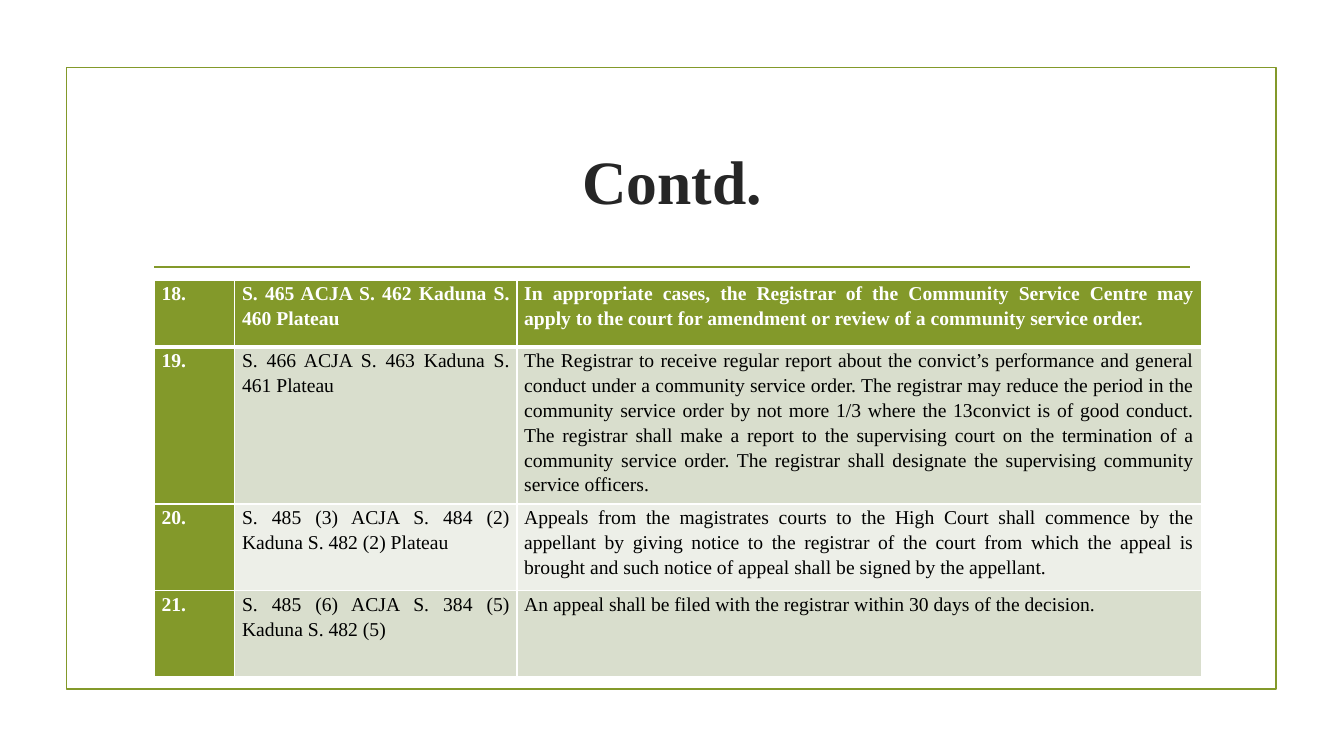
import lxml.etree
import pptx
import pptx.dml.color
import pptx.enum.shapes
import pptx.enum.text
import pptx.oxml.ns
import pptx.util

Cm = pptx.util.Cm
Pt = pptx.util.Pt
RGBColor = pptx.dml.color.RGBColor
qn = pptx.oxml.ns.qn

GREEN = RGBColor(0x83, 0x99, 0x2A)
DARK_BAND = RGBColor(0xD9, 0xDE, 0xCD)
LIGHT_BAND = RGBColor(0xED, 0xEF, 0xE8)
CHARCOAL = RGBColor(0x26, 0x26, 0x26)
WHITE = RGBColor(0xFF, 0xFF, 0xFF)
BLACK = RGBColor(0x00, 0x00, 0x00)

FONT_NAME = "Times New Roman"
COLUMN_WIDTHS = [2.03, 7.11, 17.25]
ROW_HEIGHTS = [1.68, 3.96, 2.18, 2.18]
PROVISIONS = [
    ("18.", "S. 465 ACJA S. 462 Kaduna S. 460 Plateau",
     "In appropriate cases, the Registrar of the Community Service Centre may "
     "apply to the court for amendment or review of a community service order."),
    ("19.", "S. 466 ACJA S. 463 Kaduna S. 461 Plateau",
     "The Registrar to receive regular report about the convict’s performance and "
     "general conduct under a community service order. The registrar may reduce the "
     "period in the community service order by not more 1/3 where the 13convict is of "
     "good conduct. The registrar shall make a report to the supervising court on the "
     "termination of a community service order. The registrar shall designate the "
     "supervising community service officers."),
    ("20.", "S. 485 (3) ACJA S. 484 (2) Kaduna S. 482 (2) Plateau",
     "Appeals from the magistrates courts to the High Court shall commence by the "
     "appellant by giving notice to the registrar of the court from which the appeal is "
     "brought and such notice of appeal shall be signed by the appellant."),
    ("21.", "S. 485 (6) ACJA S. 384 (5) Kaduna S. 482 (5)",
     "An appeal shall be filed with the registrar within 30 days of the decision."),
]


def set_values(target, values):
    for name, value in values.items():
        setattr(target, name, value)


def write_text(frame, text, size, color, bold, paragraph_format):
    para = frame.paragraphs[0]
    set_values(para, paragraph_format)
    span = para.add_run()
    span.text = text
    set_values(span.font, {"name": FONT_NAME, "size": Pt(size), "bold": bold})
    span.font.color.rgb = color


def style_line(line):
    line.color.rgb = GREEN
    line.width = Pt(1.25)


def add_frame(page):
    frame = page.shapes.add_shape(
        pptx.enum.shapes.MSO_SHAPE.RECTANGLE, Cm(1.68), Cm(1.7), Cm(30.48), Cm(15.67))
    frame.shadow.inherit = False
    frame.fill.background()
    style_line(frame.line)


def add_rule(page):
    rule = page.shapes.add_connector(
        pptx.enum.shapes.MSO_CONNECTOR.STRAIGHT, Cm(3.89), Cm(6.73), Cm(30), Cm(6.73))
    style_line(rule.line)
    lxml.etree.SubElement(rule.element.spPr, qn("a:effectLst"))


def set_title(page, text):
    title = page.shapes.title
    set_values(title, {"left": Cm(3.61), "top": Cm(2.72),
                       "width": Cm(26.67), "height": Cm(3.63)})
    title.text_frame.vertical_anchor = pptx.enum.text.MSO_ANCHOR.MIDDLE
    write_text(title.text_frame, text, 44, CHARCOAL, True,
               {"alignment": pptx.enum.text.PP_ALIGN.CENTER})


def add_borders(cell, widths):
    properties = cell._tc.get_or_add_tcPr()
    for position, (side, width) in enumerate(widths.items()):
        border = lxml.etree.Element(qn("a:" + side), w=str(Pt(width)))
        fill = lxml.etree.SubElement(border, qn("a:solidFill"))
        lxml.etree.SubElement(fill, qn("a:srgbClr"), val=str(WHITE))
        properties.insert(position, border)


def fill_cell(cell, text, row, column):
    heading = row == 0 or column == 0
    band = DARK_BAND if row % 2 else LIGHT_BAND
    set_values(cell, {"margin_left": Cm(0.18), "margin_right": Cm(0.18),
                      "margin_top": 0, "margin_bottom": 0})
    cell.fill.solid()
    cell.fill.fore_color.rgb = GREEN if heading else band
    write_text(cell.text_frame, text, 14, WHITE if heading else BLACK, heading,
               {"alignment": pptx.enum.text.PP_ALIGN.JUSTIFY, "line_spacing": 1.15})
    add_borders(cell, {"lnL": 1, "lnR": 1, "lnT": 3 if row == 1 else 1,
                       "lnB": 3 if row == 0 else 1})


def add_provisions(page):
    table = page.shapes.add_table(
        len(ROW_HEIGHTS), len(COLUMN_WIDTHS), Cm(3.89), Cm(7.06),
        Cm(sum(COLUMN_WIDTHS)), Cm(sum(ROW_HEIGHTS))).table
    table.first_col = True
    for column, width in zip(table.columns, COLUMN_WIDTHS):
        column.width = Cm(width)
    for row, height in zip(table.rows, ROW_HEIGHTS):
        row.height = Cm(height)
    for row, provision in enumerate(PROVISIONS):
        for column, text in enumerate(provision):
            fill_cell(table.cell(row, column), text, row, column)


def main():
    deck = pptx.Presentation()
    set_values(deck, {"slide_width": Cm(33.87), "slide_height": Cm(19.05)})
    page = deck.slides.add_slide(deck.slide_layouts[5])
    add_frame(page)
    add_rule(page)
    set_title(page, "Contd.")
    add_provisions(page)
    deck.save("out.pptx")


if __name__ == "__main__":
    main()
